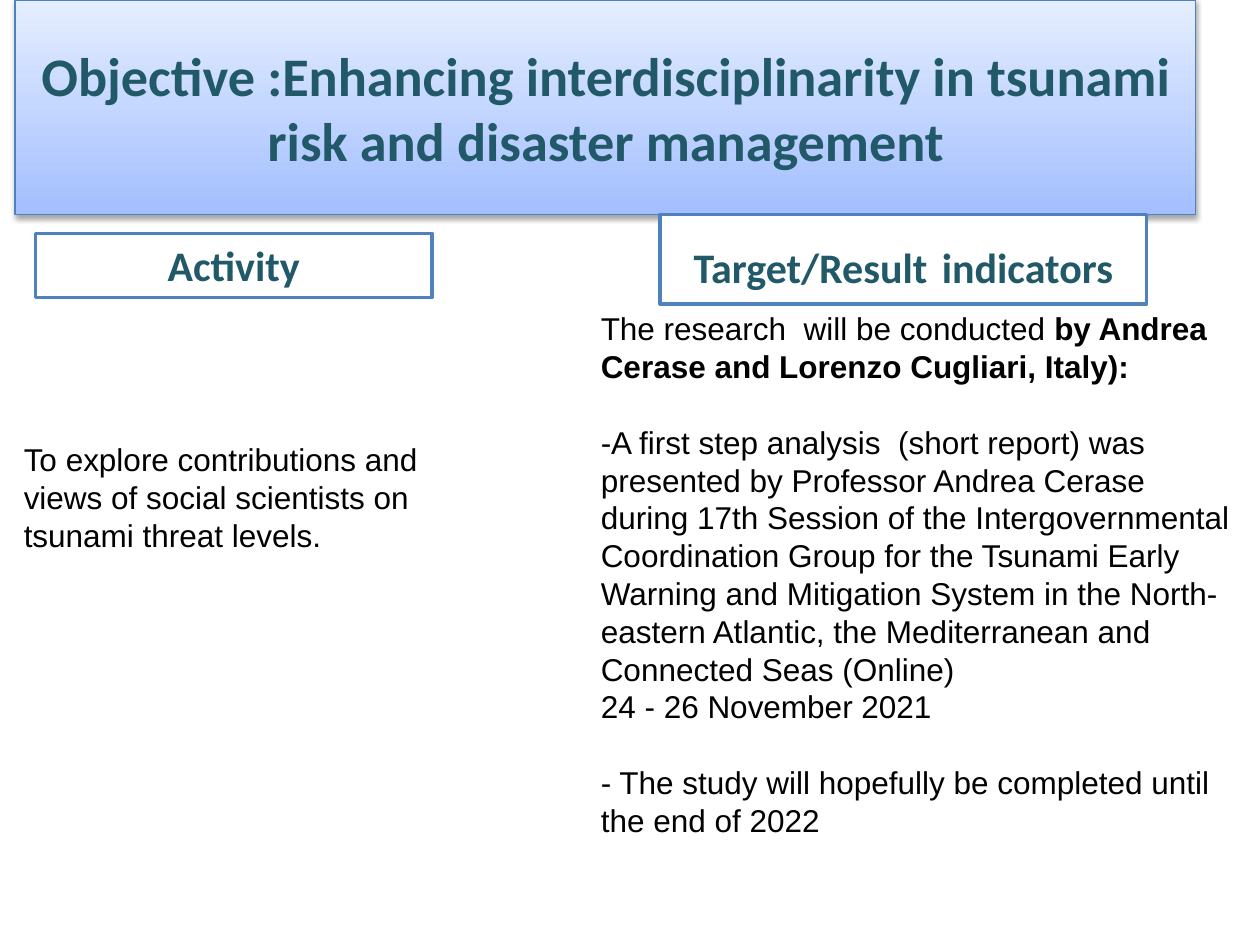
from dataclasses import dataclass

from lxml import etree
from pptx import Presentation
from pptx.dml.color import RGBColor
from pptx.enum.shapes import MSO_SHAPE
from pptx.enum.text import MSO_ANCHOR, MSO_AUTO_SIZE, PP_ALIGN
from pptx.oxml import parse_xml
from pptx.util import Inches, Pt

RECT = MSO_SHAPE.RECTANGLE
TOP, MID = MSO_ANCHOR.TOP, MSO_ANCHOR.MIDDLE
LEFT, MIDDLE = PP_ALIGN.LEFT, PP_ALIGN.CENTER
FIXED, GROW = MSO_AUTO_SIZE.NONE, MSO_AUTO_SIZE.SHAPE_TO_FIT_TEXT
WIDE, HIGH = Inches(10), Inches(7.5)


@dataclass(frozen=True)
class Theme:
    teal: str = "215968"
    black: str = "000000"
    white: str = "FFFFFF"
    edge: str = "4F81BD"
    pale: str = "E5EEFF"
    deep: str = "A3BFFF"
    head: str = "Calibri"
    body: str = "Arial"
    title: float = 31
    label: float = 24
    gap: float = 36
    text: float = 18
    pitch: float = 21.6


@dataclass(frozen=True)
class Run:
    text: str
    bold: bool = False
    size: float | None = None


@dataclass(frozen=True)
class Para:
    runs: tuple[Run, ...]
    lead: int = 0  # lines left free above


@dataclass(frozen=True)
class Area:
    """Place on the slide, in hundredths of its width and height."""
    x: float
    y: float
    w: float
    h: float

    def box(self) -> tuple[int, int, int, int]:
        return (int(WIDE * self.x / 100), int(HIGH * self.y / 100),
                int(WIDE * self.w / 100), int(HIGH * self.h / 100))


@dataclass(frozen=True)
class Label:
    area: Area
    runs: tuple[Run, ...]


@dataclass(frozen=True)
class Block:
    area: Area
    paras: tuple[Para, ...]


THEME = Theme()

TITLE = Run("Objective :Enhancing interdisciplinarity in tsunami risk and "
            "disaster management", True)
BANNER = Area(1.2, 0, 93.7, 22.7)

LABELS = (
    Label(Area(2.8, 24.7, 31.5, 6.8), (Run("Activity", True),)),
    Label(Area(52.4, 22.7, 38.6, 9.5),
          (Run("Target/Result", True), Run(" ", True, THEME.gap),
           Run("indicators", True))),
)

BLOCKS = (
    Block(Area(0.9, 45.9, 37.8, 13.5), (
        Para((Run("To explore contributions and views of social scientists "
                  "on tsunami threat levels."),)),
    )),
    Block(Area(46.7, 32.1, 52.4, 57.9), (
        Para((Run("The research  will be conducted "),
              Run("by Andrea Cerase and Lorenzo Cugliari, Italy):", True))),
        Para((Run("-A first step analysis  (short report) was presented by "
                  "Professor Andrea Cerase during 17th Session of the "
                  "Intergovernmental Coordination Group for the Tsunami "
                  "Early Warning and Mitigation System in the North-eastern "
                  "Atlantic, the Mediterranean and Connected Seas "
                  "(Online)"),), lead=1),
        Para((Run("24 - 26 November 2021"),)),
        Para((Run("- The study will hopefully be completed until the end "
                  "of 2022"),), lead=1),
    )),
)


def ink(code: str) -> RGBColor:
    return RGBColor.from_string(code)


def write(frame, paras: tuple[Para, ...], *, font: str, size: float,
          color: str, align=LEFT, anchor=TOP, fit=GROW,
          pitch: float | None = None) -> None:
    frame.word_wrap = True
    frame.auto_size = fit
    frame.vertical_anchor = anchor
    for i, item in enumerate(paras):
        para = frame.paragraphs[0] if i == 0 else frame.add_paragraph()
        para.alignment = align
        if pitch:
            para.line_spacing = Pt(pitch)
            para.space_before = Pt(pitch * item.lead)
        for part in item.runs:
            run = para.add_run()
            run.text = part.text
            run.font.name = font
            run.font.size = Pt(part.size or size)
            run.font.bold = part.bold
            run.font.color.rgb = ink(color)


def shade(shape) -> None:
    """Add a soft shadow that falls straight down."""
    space = "http://schemas.openxmlformats.org/drawingml/2006/main"
    glow = etree.fromstring(
        f'<a:effectLst xmlns:a="{space}">'
        '<a:outerShdw blurRad="40000" dist="23000" dir="5400000" '
        'rotWithShape="0"><a:srgbClr val="000000"><a:alpha val="35000"/>'
        '</a:srgbClr></a:outerShdw></a:effectLst>')
    shape._element.spPr.append(parse_xml(etree.tostring(glow)))


def draw_title(slide) -> None:
    title = slide.shapes.title
    title.left, title.top, title.width, title.height = BANNER.box()
    title.fill.gradient()
    title.fill.gradient_angle = 270
    for stop, code in zip(title.fill.gradient_stops,
                          (THEME.pale, THEME.deep)):
        stop.color.rgb = ink(code)
    title.line.color.rgb = ink(THEME.edge)
    title.line.width = Pt(0.75)
    shade(title)
    write(title.text_frame, (Para((TITLE,)),), font=THEME.head,
          size=THEME.title, color=THEME.teal, align=MIDDLE, anchor=MID,
          fit=FIXED)


def draw_label(slide, label: Label) -> None:
    shape = slide.shapes.add_shape(RECT, *label.area.box())
    shape.shadow.inherit = False
    shape.fill.solid()
    shape.fill.fore_color.rgb = ink(THEME.white)
    shape.line.color.rgb = ink(THEME.edge)
    shape.line.width = Pt(2)
    write(shape.text_frame, (Para(label.runs),), font=THEME.head,
          size=THEME.label, color=THEME.teal, align=MIDDLE)


def draw_block(slide, block: Block) -> None:
    shape = slide.shapes.add_textbox(*block.area.box())
    write(shape.text_frame, block.paras, font=THEME.body, size=THEME.text,
          color=THEME.black, pitch=THEME.pitch)


def main() -> None:
    deck = Presentation()
    deck.slide_width, deck.slide_height = WIDE, HIGH
    slide = deck.slides.add_slide(deck.slide_layouts.get_by_name("Title Only"))
    draw_title(slide)
    for label in LABELS:
        draw_label(slide, label)
    for block in BLOCKS:
        draw_block(slide, block)
    deck.save("out.pptx")


if __name__ == "__main__":
    main()
